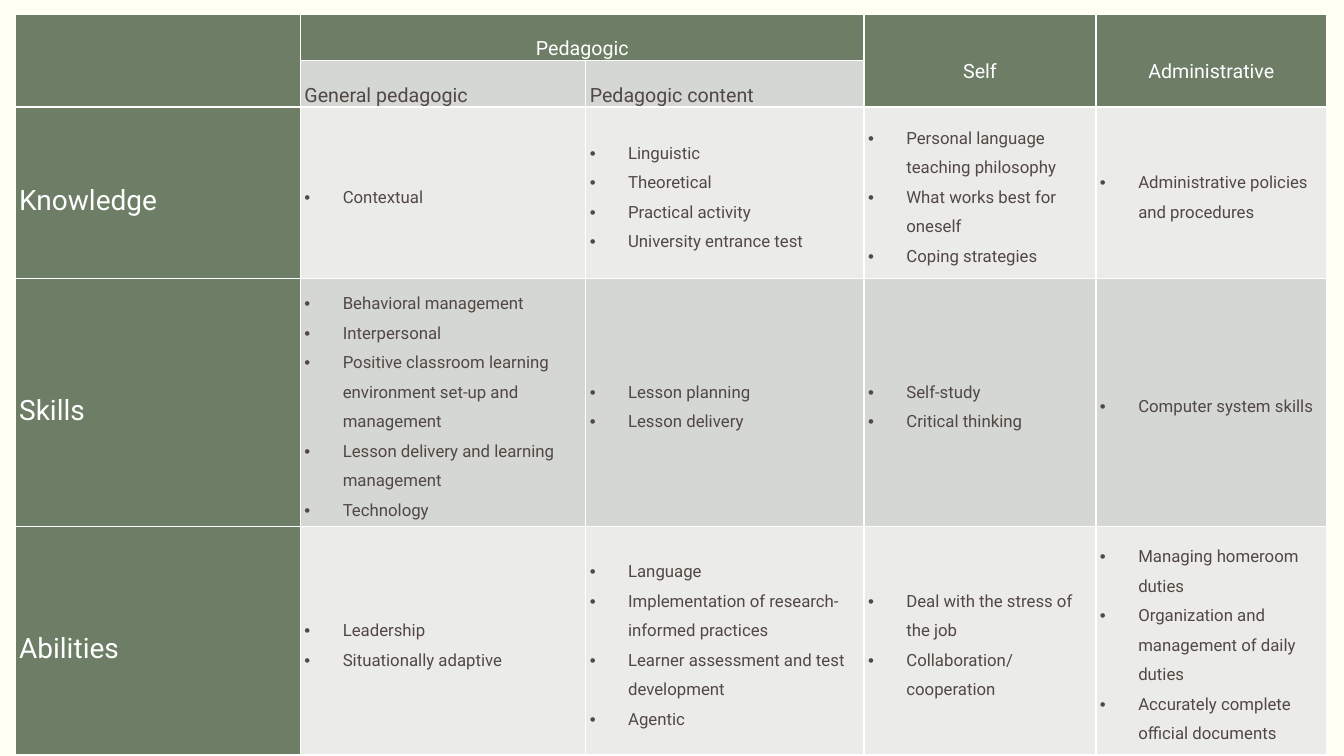
from lxml import etree
from pptx import Presentation
from pptx.dml.color import RGBColor
from pptx.enum.text import MSO_ANCHOR, PP_ALIGN
from pptx.oxml.ns import qn
from pptx.util import Inches, Pt

MIDDLE = MSO_ANCHOR.MIDDLE
LEFT, CENTER, JUSTIFY = PP_ALIGN.LEFT, PP_ALIGN.CENTER, PP_ALIGN.JUSTIFY

COLORS = {"page": "FFFFF3", "green": "6D7D66", "light": "EBECEA",
          "gray": "D4D7D3", "ink": "514843", "white": "FFFFFF"}
COL_WIDTHS = [2.83, 2.83, 2.76, 2.3, 2.29]
ROW_HEIGHTS = [0.22, 0.38, 1.7, 2.46, 2.27]

# row, column, text, alignment, colour
HEADERS = [
    (0, 1, "Pedagogic", CENTER, "white"),
    (0, 3, "Self", CENTER, "white"),
    (0, 4, "Administrative", CENTER, "white"),
    (1, 1, "General pedagogic", LEFT, "ink"),
    (1, 2, "Pedagogic content", LEFT, "ink"),
]
BODY = {
    "Knowledge": [
        ["Contextual"],
        ["Linguistic", "Theoretical", "Practical activity", "University entrance test"],
        ["Personal language teaching philosophy", "What works best for oneself",
         "Coping strategies"],
        ["Administrative policies and procedures"],
    ],
    "Skills": [
        ["Behavioral management", "Interpersonal",
         "Positive classroom learning environment set-up and management",
         "Lesson delivery and learning management", "Technology"],
        ["Lesson planning", "Lesson delivery"],
        ["Self-study", "Critical thinking"],
        ["Computer system skills"],
    ],
    "Abilities": [
        ["Leadership", "Situationally adaptive"],
        ["Language", "Implementation of research-informed practices",
         "Learner assessment and test development", "Agentic"],
        ["Deal with the stress of the job", "Collaboration/ cooperation"],
        ["Managing homeroom duties", "Organization and management of daily duties",
         "Accurately complete official documents"],
    ],
}


def write_cell(cell, lines, size, color, align, spacing, bullets=False):
    tf = cell.text_frame
    tf.text = "\n".join(lines)
    for p in tf.paragraphs:
        p.alignment = align
        p.line_spacing = spacing
        font = p.runs[0].font
        font.name = "Roboto"
        font.size = Pt(size)
        font.color.rgb = RGBColor.from_string(COLORS[color])
        if bullets:
            pPr = p._p.get_or_add_pPr()
            pPr.set("marL", str(Inches(0.38)))
            pPr.set("indent", str(-Inches(0.38)))
            etree.SubElement(pPr, qn("a:buFont")).set("typeface", "Arial")
            etree.SubElement(pPr, qn("a:buChar")).set("char", "•")


def style_cell(cell, fill):
    """Set margins, fill and thin white borders."""
    cell.margin_left = cell.margin_right = Inches(0.04)
    cell.margin_top = cell.margin_bottom = 0
    cell.vertical_anchor = MIDDLE
    cell.fill.solid()
    cell.fill.fore_color.rgb = RGBColor.from_string(COLORS[fill])
    tcPr = cell._tc.get_or_add_tcPr()
    for i, side in enumerate(["lnL", "lnR", "lnT", "lnB"]):
        ln = etree.Element(qn(f"a:{side}"), w=str(Pt(1)))
        line_fill = etree.SubElement(ln, qn("a:solidFill"))
        etree.SubElement(line_fill, qn("a:srgbClr")).set("val", COLORS["white"])
        tcPr.insert(i, ln)


prs = Presentation()
prs.slide_width, prs.slide_height = Inches(13.33), Inches(7.5)
s = prs.slides.add_slide(prs.slide_layouts[6])
s.background.fill.solid()
s.background.fill.fore_color.rgb = RGBColor.from_string(COLORS["page"])

table = s.shapes.add_table(len(ROW_HEIGHTS), len(COL_WIDTHS), Inches(0.15), Inches(0.14),
                           Inches(sum(COL_WIDTHS)), Inches(sum(ROW_HEIGHTS))).table
table.first_row = table.horz_banding = False
for column, width in zip(table.columns, COL_WIDTHS):
    column.width = Inches(width)
for row, height in zip(table.rows, ROW_HEIGHTS):
    row.height = Inches(height)

for r in range(len(ROW_HEIGHTS)):
    for c in range(len(COL_WIDTHS)):
        if r == 0 or c == 0 or (r == 1 and c > 2):
            fill = "green"
        else:
            fill = "gray" if r % 2 else "light"
        style_cell(table.cell(r, c), fill)

table.cell(0, 1).merge(table.cell(0, 2))
for c in (0, 3, 4):
    table.cell(0, c).merge(table.cell(1, c))

for r, c, text, align, color in HEADERS:
    write_cell(table.cell(r, c), [text], 14, color, align, 2.0)
for r, (label, groups) in enumerate(BODY.items(), start=2):
    write_cell(table.cell(r, 0), [label], 20, "white", JUSTIFY, 1.5)
    for c, items in enumerate(groups, start=1):
        write_cell(table.cell(r, c), items, 12, "ink", LEFT, 1.5, bullets=True)

prs.save("out.pptx")
